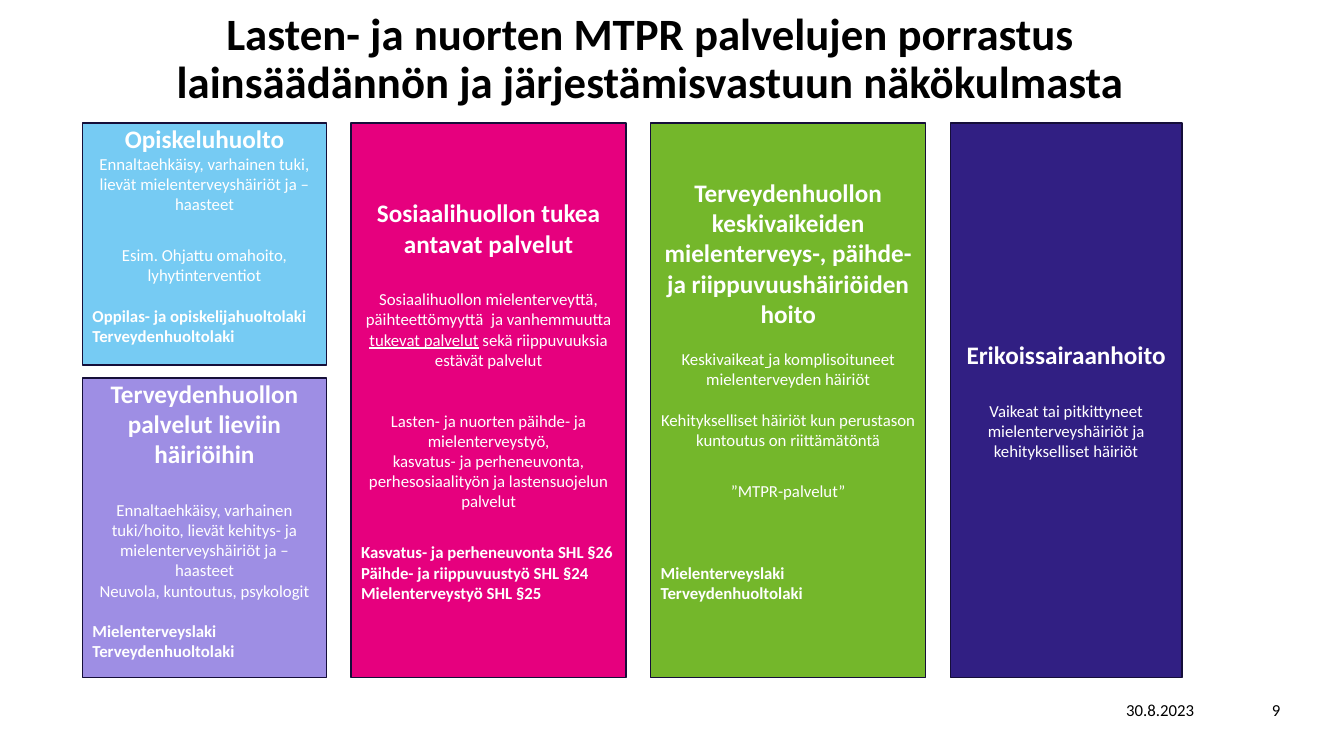
from pptx import Presentation
from pptx.dml.color import RGBColor
from pptx.enum.shapes import MSO_SHAPE as Shape
from pptx.enum.text import MSO_ANCHOR as Anchor, PP_ALIGN as Align
from pptx.util import Cm, Pt

SMALL_LINE, LARGE_LINE = 14.6, 22  # line heights of 12 and 18 pt text
TOP, HEIGHT = 3.1, 13.97
LEFT, GAP, STACK_GAP = 2.08, 0.62, 0.33
WIDTHS = [6.15, 6.93, 6.93, 5.84]
UPPER_HEIGHT = 6.1


def colour(code):
    return RGBColor.from_string(code)


def text(*spans, size=12, bold=False, align=Align.CENTER, before=0, spacing=None):
    """Describe a paragraph; a span given as a one-item list is underlined."""
    return dict(spans=spans, size=size, bold=bold, align=align,
                before=before, spacing=spacing)


def heading(words):
    return text(words, size=18, bold=True)


def laws(*names, before):
    return [text(name, bold=True, align=Align.LEFT, before=0 if index else before)
            for index, name in enumerate(names)]


class Page:
    """A slide with its shared font and line style."""
    font = "Calibri"
    outline = "150E39"

    def __init__(self, deck):
        self.shapes = deck.slides.add_slide(deck.slide_layouts[6]).shapes

    def fill_text(self, frame, paragraphs, ink, anchor=Anchor.MIDDLE):
        frame.word_wrap = True
        frame.vertical_anchor = anchor
        for index, item in enumerate(paragraphs):
            para = frame.add_paragraph() if index else frame.paragraphs[0]
            para.alignment = item["align"]
            if item["before"]:
                para.space_before = Pt(item["before"])
            if item["spacing"]:
                para.line_spacing = item["spacing"]
            for words in item["spans"]:
                underlined = isinstance(words, list)
                span = para.add_run()
                span.text = words[0] if underlined else words
                font = span.font
                font.name, font.size, font.bold = self.font, Pt(item["size"]), item["bold"]
                font.color.rgb = colour(ink)
                if underlined:
                    font.underline = True

    def label(self, left, top, width, height, paragraph):
        box = self.shapes.add_textbox(Cm(left), Cm(top), Cm(width), Cm(height))
        self.fill_text(box.text_frame, [paragraph], "000000")

    def panel(self, left, top, width, height, fill, paragraphs,
              anchor=Anchor.MIDDLE, inset_top=3.6, inset_bottom=3.6):
        box = self.shapes.add_shape(Shape.RECTANGLE, Cm(left), Cm(top), Cm(width), Cm(height))
        box.shadow.inherit = False
        box.fill.solid()
        box.fill.fore_color.rgb = colour(fill)
        box.line.color.rgb = colour(self.outline)
        box.line.width = Pt(1)
        frame = box.text_frame
        frame.margin_top, frame.margin_bottom = Pt(inset_top), Pt(inset_bottom)
        self.fill_text(frame, paragraphs, "FFFFFF", anchor)


STUDENT_CARE = [
    heading("Opiskeluhuolto"),
    text("Ennaltaehkäisy, varhainen tuki, lievät mielenterveyshäiriöt ja –haasteet"),
    text("Esim. Ohjattu omahoito, lyhytinterventiot", before=LARGE_LINE),
    *laws("Oppilas- ja opiskelijahuoltolaki", "Terveydenhuoltolaki", before=SMALL_LINE),
]
MILD_CARE = [
    heading("Terveydenhuollon palvelut lieviin häiriöihin"),
    text("Ennaltaehkäisy, varhainen tuki/hoito, lievät kehitys- ja "
         "mielenterveyshäiriöt ja –haasteet", before=LARGE_LINE),
    text("Neuvola, kuntoutus, psykologit"),
    *laws("Mielenterveyslaki", "Terveydenhuoltolaki", before=SMALL_LINE),
]
SOCIAL_CARE = [
    heading("Sosiaalihuollon tukea antavat palvelut"),
    text("Sosiaalihuollon mielenterveyttä, päihteettömyyttä  ja vanhemmuutta",
         [" tukevat palvelut"], " sekä riippuvuuksia estävät palvelut", before=LARGE_LINE),
    text("Lasten- ja nuorten päihde- ja mielenterveystyö,", before=2 * SMALL_LINE),
    text("kasvatus- ja perheneuvonta, perhesosiaalityön ja lastensuojelun palvelut"),
    *laws("Kasvatus- ja perheneuvonta SHL §26", "Päihde- ja riippuvuustyö SHL §24",
          "Mielenterveystyö SHL §25", before=LARGE_LINE),
]
MODERATE_CARE = [
    heading("Terveydenhuollon keskivaikeiden mielenterveys-, päihde- "
            "ja riippuvuushäiriöiden hoito"),
    text("Keskivaikeat", [" "], "ja komplisoituneet mielenterveyden häiriöt",
         before=SMALL_LINE),
    text("Kehitykselliset häiriöt kun perustason kuntoutus on riittämätöntä",
         before=SMALL_LINE),
    text("”MTPR-palvelut”", before=LARGE_LINE),
    *laws("Mielenterveyslaki", "Terveydenhuoltolaki", before=3 * SMALL_LINE),
]
SPECIAL_CARE = [
    heading("Erikoissairaanhoito"),
    text("Vaikeat tai pitkittyneet mielenterveyshäiriöt ja kehitykselliset häiriöt",
         before=LARGE_LINE),
]


def main():
    deck = Presentation()
    deck.slide_width, deck.slide_height = Cm(33.87), Cm(19.05)
    page = Page(deck)

    page.label(27.74, 17.37, 3, 1.02, text("30.8.2023"))
    page.label(31.32, 17.37, 1.68, 1.02, text("9"))
    page.label(LEFT, 0.66, 28.63, 1.7, text(
        "Lasten- ja nuorten MTPR palvelujen porrastus lainsäädännön "
        "ja järjestämisvastuun näkökulmasta", size=32, bold=True, spacing=0.9))

    lower_top = TOP + UPPER_HEIGHT + STACK_GAP
    lower_height = TOP + HEIGHT - lower_top
    for top, height, fill, paragraphs in [
        (TOP, UPPER_HEIGHT, "76CBF3", STUDENT_CARE),
        (lower_top, lower_height, "9E8EE4", MILD_CARE),
    ]:
        page.panel(LEFT, top, WIDTHS[0], height, fill, paragraphs,
                   anchor=Anchor.TOP, inset_top=0)

    left = LEFT + WIDTHS[0] + GAP
    for width, fill, paragraphs, space_below in [
        (WIDTHS[1], "E6007E", SOCIAL_CARE, 0),
        (WIDTHS[2], "74B72B", MODERATE_CARE, SMALL_LINE),
        (WIDTHS[3], "311F83", SPECIAL_CARE, 0),
    ]:
        page.panel(left, TOP, width, HEIGHT, fill, paragraphs,
                   inset_bottom=3.6 + space_below)
        left += width + GAP

    deck.save("out.pptx")


if __name__ == "__main__":
    main()
